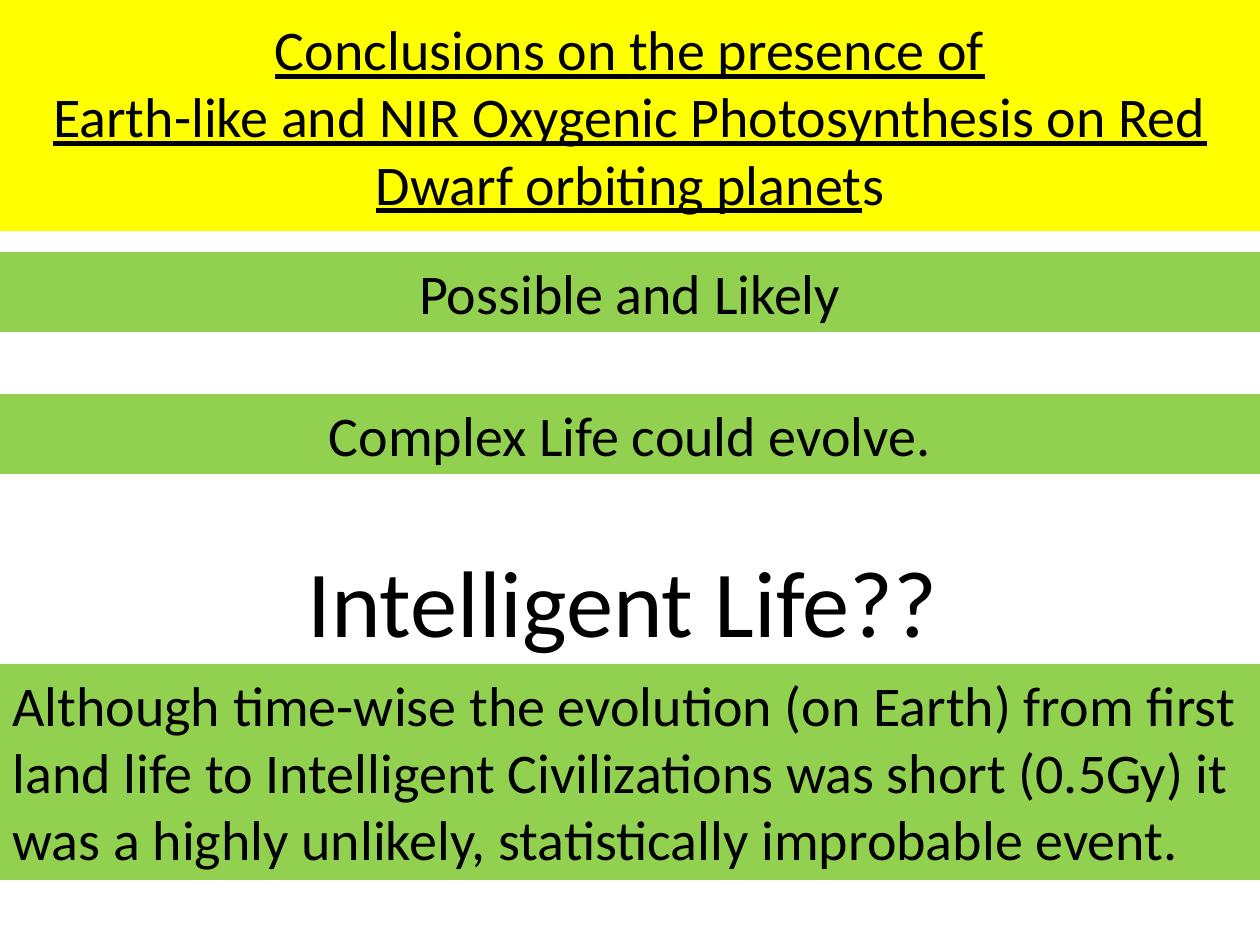
from pptx import Presentation
from pptx.dml.color import RGBColor
from pptx.enum.text import MSO_ANCHOR, PP_ALIGN
from pptx.util import Pt

PX = 914400 / 126  # EMU in one px
WIDE, HIGH = 1260, 945

BLACK = RGBColor(0x00, 0x00, 0x00)
YELLOW = RGBColor(0xFF, 0xFF, 0x00)
GREEN = RGBColor(0x92, 0xD0, 0x50)

TITLE = ("Conclusions on the presence of\n"
         "Earth-like and NIR Oxygenic Photosynthesis on Red Dwarf orbiting planet")
EVENT = ("Although time-wise the evolution (on Earth) from first land life to "
         "Intelligent Civilizations was short (0.5Gy) it was a highly unlikely, "
         "statistically improbable event.")


def px(count):
    return round(count * PX)


def add_run(para, text, size=32, line=False):
    """Add text to a paragraph, with a line break at each newline."""
    for i, part in enumerate(text.split("\n")):
        if i:
            para.add_line_break()
        run = para.add_run()
        run.text = part
        font = run.font
        font.name = "Calibri"
        font.size = Pt(size)
        font.color.rgb = BLACK
        font.underline = line


def add_text(slide, text, top, high, left=0, wide=WIDE, fill=None,
             align=PP_ALIGN.CENTER, anchor=MSO_ANCHOR.TOP, **style):
    """Add a text box, filled if asked, and return its paragraph."""
    box = slide.shapes.add_textbox(px(left), px(top), px(wide), px(high))
    if fill is not None:
        box.fill.solid()
        box.fill.fore_color.rgb = fill
    frame = box.text_frame
    frame.word_wrap = True
    frame.vertical_anchor = anchor
    para = frame.paragraphs[0]
    para.alignment = align
    add_run(para, text, **style)
    return para


def main():
    deck = Presentation()
    deck.slide_width, deck.slide_height = px(WIDE), px(HIGH)
    slide = deck.slides.add_slide(deck.slide_layouts[6])

    # Title band, its last letter not underlined
    title = add_text(slide, TITLE, 0, 231, fill=YELLOW,
                     anchor=MSO_ANCHOR.MIDDLE, line=True)
    add_run(title, "s")

    # Short findings
    add_text(slide, "Possible and Likely", 252, 80, fill=GREEN)
    add_text(slide, "Complex Life could evolve.", 394, 80, fill=GREEN)

    # Closing question and its answer
    add_text(slide, EVENT, 664, 216, fill=GREEN, align=PP_ALIGN.LEFT)
    add_text(slide, "Intelligent Life??", 537, 127, left=295, wide=702,
             align=PP_ALIGN.LEFT, size=54)

    deck.save("out.pptx")


if __name__ == "__main__":
    main()
